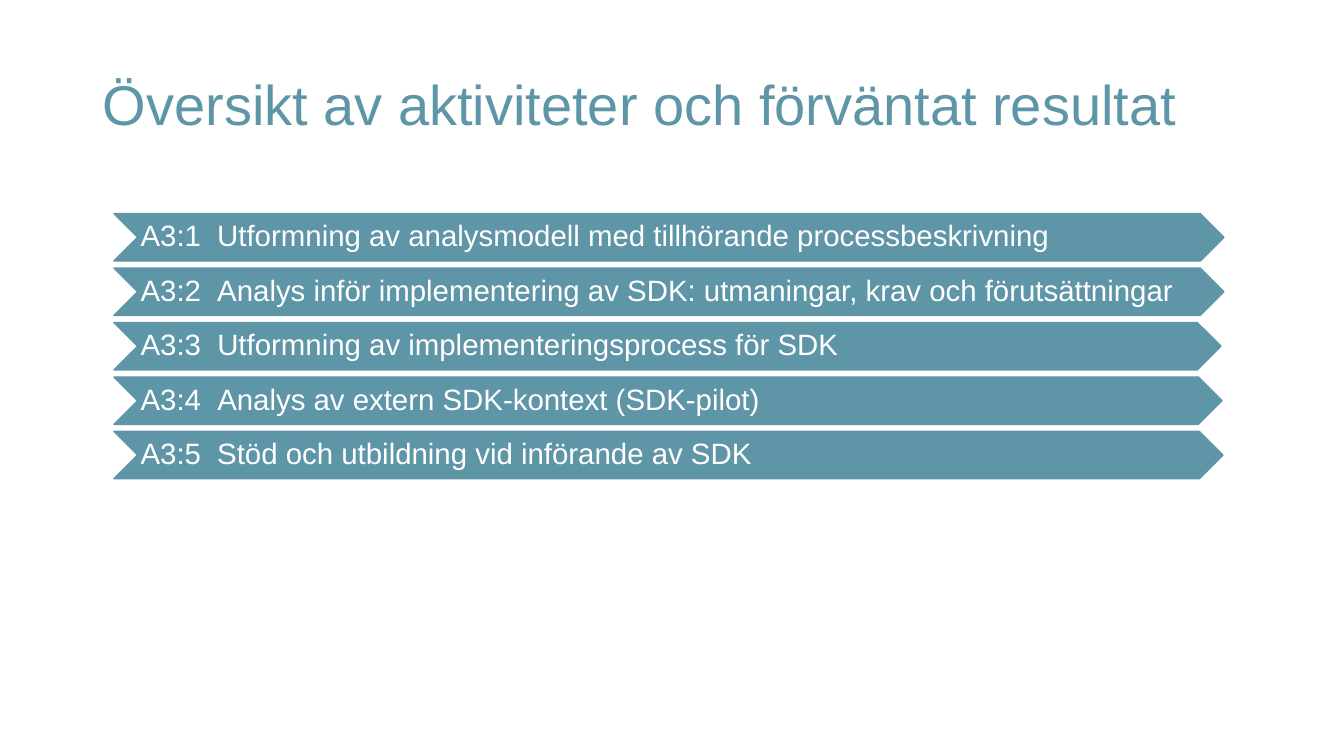
"""Build the slide with an overview of activities A3:1 to A3:5."""
from dataclasses import dataclass

from pptx import Presentation
from pptx.dml.color import RGBColor
from pptx.enum import shapes, text
from pptx.util import Inches, Pt

TITLE = "Översikt av aktiviteter och förväntat resultat"
ACTIVITIES = [
    ("A3:1", "Utformning av analysmodell med tillhörande processbeskrivning", 11.01),
    ("A3:2", "Analys inför implementering av SDK: utmaningar, krav och förutsättningar", 11.01),
    ("A3:3", "Utformning av implementeringsprocess för SDK", 10.98),
    ("A3:4", "Analys av extern SDK-kontext (SDK-pilot)", 10.99),
    ("A3:5", "Stöd och utbildning vid införande av SDK", 11.0),
]
LEFT, TOP, HEIGHT, PITCH = 1.13, 2.12, 0.47, 0.54
CODE_WIDTH = 0.76


@dataclass(frozen=True)
class Theme:
    font: str = "Arial"
    title: RGBColor = RGBColor(0x5E, 0x96, 0xA8)
    bar: RGBColor = RGBColor(0x5E, 0x95, 0xA7)
    label: RGBColor = RGBColor(0xFF, 0xFF, 0xFF)
    title_size: int = 40
    label_size: int = 21


THEME = Theme()


def write(tf, words, size, color):
    tf.word_wrap = True
    tf.auto_size = text.MSO_AUTO_SIZE.NONE
    tf.vertical_anchor = text.MSO_ANCHOR.MIDDLE
    p = tf.paragraphs[0]
    p.text = words
    p.alignment = text.PP_ALIGN.LEFT
    p.line_spacing = 0.9
    p.font.name = THEME.font
    p.font.size = Pt(size)
    p.font.color.rgb = color
    return p


def add_bar(slide, top, width):
    sp = slide.shapes.add_shape(
        shapes.MSO_SHAPE.CHEVRON,
        Inches(LEFT), Inches(top), Inches(width), Inches(HEIGHT))
    sp.shadow.inherit = False
    sp.fill.solid()
    sp.fill.fore_color.rgb = THEME.bar
    sp.line.color.rgb = THEME.bar
    sp.line.width = Pt(1)


def add_label(slide, top, width, code, activity):
    sp = slide.shapes.add_textbox(
        Inches(LEFT + HEIGHT / 2), Inches(top), Inches(width - HEIGHT), Inches(HEIGHT))
    tf = sp.text_frame
    tf.margin_left, tf.margin_right = Inches(0.03), 0
    tf.margin_top = tf.margin_bottom = Inches(0.01)
    p = write(tf, f"{code}\t{activity}", THEME.label_size, THEME.label)
    pPr = p._p.get_or_add_pPr()
    pPr.set("marL", str(Inches(CODE_WIDTH)))
    pPr.set("indent", str(-Inches(CODE_WIDTH)))


def main():
    prs = Presentation()
    prs.slide_width, prs.slide_height = Inches(13.33), Inches(7.5)
    slide = prs.slides.add_slide(prs.slide_layouts[5])
    title = slide.shapes.title
    title.left, title.top = Inches(0.92), Inches(0.62)
    title.width, title.height = Inches(11.5), Inches(0.89)
    write(title.text_frame, TITLE, THEME.title_size, THEME.title)
    for i, (code, activity, width) in enumerate(ACTIVITIES):
        top = TOP + i * PITCH
        add_bar(slide, top, width)
        add_label(slide, top, width, code, activity)
    prs.save("out.pptx")


if __name__ == "__main__":
    main()
